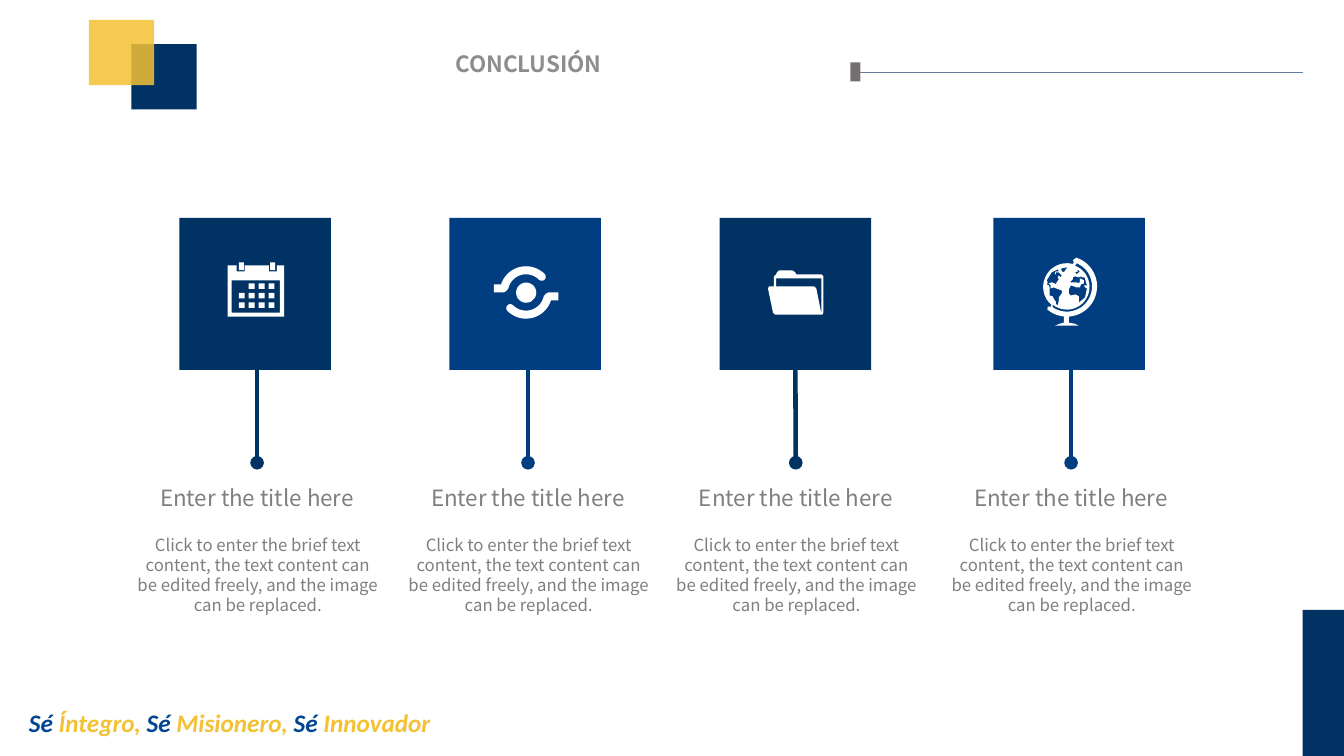
from math import cos, radians, sin

from lxml.etree import SubElement
from pptx import Presentation
from pptx.dml.color import RGBColor
from pptx.enum.shapes import MSO_CONNECTOR, MSO_SHAPE
from pptx.enum.text import MSO_ANCHOR, PP_ALIGN
from pptx.oxml.ns import qn
from pptx.util import Cm, Pt

NAVY = RGBColor(0x00, 0x32, 0x64)
BLUE = RGBColor(0x00, 0x3E, 0x81)
MOTTO_BLUE = RGBColor(0x00, 0x46, 0x92)
YELLOW = RGBColor(0xF3, 0xC1, 0x33)
WHITE = RGBColor(0xFF, 0xFF, 0xFF)
TITLE_GREY = RGBColor(0x8D, 0x8D, 0x8D)
TEXT_GREY = RGBColor(0x7F, 0x7F, 0x7F)
MARKER_GREY = RGBColor(0x75, 0x70, 0x70)
RULE_BLUE = RGBColor(0x63, 0x7D, 0x9C)

SANS = "Noto Sans CJK SC"
HEADING = "Enter the title here"
DESCRIPTION = ("Click to enter the brief text content, the text content can "
               "be edited freely, and the image can be replaced.")
TILE_TOP, TILE_SIZE = 5.49, 3.82
ICON_UNIT = Cm(2.54) / 1000  # icon outlines are in hundredths of an inch, times ten


# Basic elements
def add_block(slide, left, top, width, height, color, kind=MSO_SHAPE.RECTANGLE, opacity=None):
    block = slide.shapes.add_shape(kind, Cm(left), Cm(top), Cm(width), Cm(height))
    block.shadow.inherit = False
    block.fill.solid()
    block.fill.fore_color.rgb = color
    block.line.fill.background()
    if opacity is not None:
        rgb = block.fill._xPr.find(".//" + qn("a:srgbClr"))
        SubElement(rgb, qn("a:alpha")).set("val", str(opacity * 1000))
    return block


def add_line(slide, x1, y1, x2, y2, color, width, dot=False):
    line = slide.shapes.add_connector(MSO_CONNECTOR.STRAIGHT, Cm(x1), Cm(y1), Cm(x2), Cm(y2))
    line.line.color.rgb = color
    line.line.width = Pt(width)
    if dot:
        SubElement(line.line._get_or_add_ln(), qn("a:tailEnd")).set("type", "oval")
    SubElement(line._element.spPr, qn("a:effectLst"))
    return line


def write(frame, text, font=SANS, size=12, color=TEXT_GREY, bold=False, italic=False,
          align=PP_ALIGN.CENTER, anchor=MSO_ANCHOR.TOP, spacing=None):
    """Append a run of text to the first paragraph of a frame."""
    frame.word_wrap = True
    frame.vertical_anchor = anchor
    paragraph = frame.paragraphs[0]
    paragraph.alignment = align
    if spacing:
        paragraph.line_spacing = spacing
    run = paragraph.add_run()
    run.text = text
    run.font.name, run.font.size = font, Pt(size)
    run.font.bold, run.font.italic = bold, italic
    run.font.color.rgb = color


def add_frame(slide, left, top, width, height):
    return slide.shapes.add_textbox(Cm(left), Cm(top), Cm(width), Cm(height)).text_frame


def add_outline(slide, tile_left, contours):
    """Fill white contours, given relative to the tile's corner; inner ones are holes."""
    scaled = [[(x * 10, y * 10) for x, y in contour] for contour in contours]
    builder = slide.shapes.build_freeform(*scaled[0][0], scale=ICON_UNIT)
    builder.add_line_segments(scaled[0][1:])
    for contour in scaled[1:]:
        builder.move_to(*contour[0])
        builder.add_line_segments(contour[1:])
    icon = builder.convert_to_shape(Cm(tile_left), Cm(TILE_TOP))
    icon.shadow.inherit = False
    icon.fill.solid()
    icon.fill.fore_color.rgb = WHITE
    icon.line.fill.background()


def arc(center_x, center_y, radius, start, end, steps=24):
    angles = [radians(start + (end - start) * i / steps) for i in range(steps + 1)]
    return [(center_x + radius * cos(a), center_y + radius * sin(a)) for a in angles]


# Icons
def draw_calendar(slide, left):
    for row in range(3):
        for col in range(4):
            if (row, col) != (0, 0):
                add_block(slide, left + 1.5 + 0.25 * col, TILE_TOP + 1.65 + 0.24 * row,
                          0.15, 0.14, WHITE)
    frame = [(104, 47), (97, 47), (97, 53), (89, 53), (89, 47), (65, 47), (65, 53),
             (57, 53), (57, 47), (48, 47), (48, 98), (104, 98)]
    page = [(100, 94), (52, 94), (52, 62), (100, 62)]
    add_outline(slide, left, [frame, page])
    for ring in (1.5, 2.29):
        add_block(slide, left + ring, TILE_TOP + 1.12, 0.13, 0.2, WHITE)


def draw_orbit(slide, left):
    x, y = 76, 74
    lower = ([(98, 74), (95.5, 75.5)] + arc(x, y, 18, 13, 135)
             + arc(60.4, 89.6, 4, 315, 135, 10) + arc(x, y, 26, 135, 18)
             + [(108, 82), (108, 74)])
    upper = [(2 * x - px, 2 * y - py) for px, py in lower]
    add_outline(slide, left, [lower, upper])
    add_block(slide, left + 1.68, TILE_TOP + 1.63, 0.51, 0.51, WHITE, MSO_SHAPE.OVAL)


def draw_folder(slide, left):
    folder = [(103, 94), (103, 58), (101, 56), (76, 56), (75, 54), (72, 52), (59, 52),
              (57, 54), (56, 56), (54, 58), (54, 68), (49, 68), (48, 70), (53, 94),
              (55, 96), (102, 96)]
    gap = [(101, 71), (101, 95), (96, 70), (94, 68), (56, 68), (56, 60), (101, 60)]
    add_outline(slide, left, [folder, gap])


def draw_globe(slide, left):
    silhouette = (arc(73, 68, 30, -72, 80)
                  + [(75, 98), (75, 104), (81, 105), (85, 107), (61, 107), (66, 105),
                     (70, 104), (70, 98)]
                  + arc(73, 68, 30, 96, 130, 8) + [(54, 88), (57, 88), (58, 86)]
                  + arc(73, 68.5, 23.5, 130, 285) + [(80, 44), (79, 42)])
    ring_gap = arc(73, 68, 25, 125, -53) + [(83, 45)] + arc(73, 68.5, 22.5, -69, 128)
    africa = [(75, 71), (77, 67), (83, 69), (86, 69), (87, 66), (90, 65), (90, 62),
              (86, 60), (86, 63), (85, 65), (83, 64), (80, 64), (76, 64), (78, 62),
              (79, 61), (79, 59), (81, 58), (85, 59), (87, 58), (88, 59), (91, 59),
              (90, 57), (93, 67), (90, 67), (91, 69), (93, 70), (91, 79), (85, 84),
              (85, 78), (82, 76), (77, 77), (75, 75)]
    north = [(83, 51), (86, 53), (83, 56), (81, 54), (84, 53)]
    island = [(68, 50), (74, 49), (72, 51), (71, 53), (69, 54), (67, 51)]
    america = [(56, 77), (56, 69), (55, 67), (53, 66), (54, 64), (53, 62), (58, 54),
               (64, 51), (65, 53), (62, 53), (61, 55), (62, 56), (62, 54), (65, 54),
               (68, 57), (67, 59), (65, 57), (64, 59), (65, 61), (63, 64), (62, 66),
               (61, 65), (58, 64), (55, 65), (57, 67), (57, 70), (60, 69), (65, 71),
               (68, 72), (68, 75), (65, 79), (65, 82), (64, 87), (62, 85), (62, 83),
               (60, 80), (59, 78)]
    add_outline(slide, left, [silhouette, ring_gap, africa, north, island, america])


# Slide parts
def add_decoration(slide):
    add_line(slide, 32.84, 1.82, 21.67, 1.82, RULE_BLUE, 0.75)
    add_block(slide, 21.44, 1.57, 0.25, 0.48, MARKER_GREY)
    add_block(slide, 3.31, 1.11, 1.65, 1.65, NAVY)
    add_block(slide, 2.24, 0.5, 1.65, 1.65, YELLOW, opacity=85)
    add_block(slide, 32.84, 15.37, 1.04, 3.68, NAVY)
    motto = add_frame(slide, 0.48, 17.7, 14.12, 1.02)
    for text, color in (("Sé", MOTTO_BLUE), (" Íntegro, ", YELLOW), ("Sé", MOTTO_BLUE),
                        (" Misionero, ", YELLOW), ("Sé", MOTTO_BLUE), (" Innovador", YELLOW)):
        write(motto, text, font="Calibri", size=18, color=color, bold=True, italic=True,
              align=PP_ALIGN.LEFT)


def add_title(slide):
    title = slide.shapes.title
    title.left, title.top, title.width, title.height = Cm(5.33), Cm(0.81), Cm(15.98), Cm(1.96)
    frame = title.text_frame
    frame.margin_left = frame.margin_right = frame.margin_top = frame.margin_bottom = Cm(0.33)
    write(frame, "CONCLUSIÓN", size=16, color=TITLE_GREY, bold=True, spacing=1.2)


def add_column(slide, tile_left, stem_x, color, draw_icon):
    stem = add_line(slide, stem_x, 8.74, stem_x, 11.66, color, 3.25, dot=True)
    write(add_frame(slide, stem_x - 2.8, 12.07, 5.6, 0.94), HEADING, size=16)
    write(add_frame(slide, stem_x - 3.27, 12.85, 6.58, 2.78), DESCRIPTION,
          anchor=MSO_ANCHOR.BOTTOM)
    tile = add_block(slide, tile_left, TILE_TOP, TILE_SIZE, TILE_SIZE + 0.01, color)
    if abs(tile_left + TILE_SIZE / 2 - stem_x) < 0.03:
        stem.begin_connect(tile, 2)
    draw_icon(slide, tile_left)


def main():
    prs = Presentation()
    prs.slide_width, prs.slide_height = Cm(33.88), Cm(19.05)
    slide = prs.slides.add_slide(prs.slide_layouts[5])
    add_decoration(slide)
    add_title(slide)
    for column in ((4.52, 6.48, NAVY, draw_calendar), (11.33, 13.31, BLUE, draw_orbit),
                   (18.14, 20.06, NAVY, draw_folder), (25.04, 27, BLUE, draw_globe)):
        add_column(slide, *column)
    prs.save("out.pptx")


if __name__ == "__main__":
    main()
